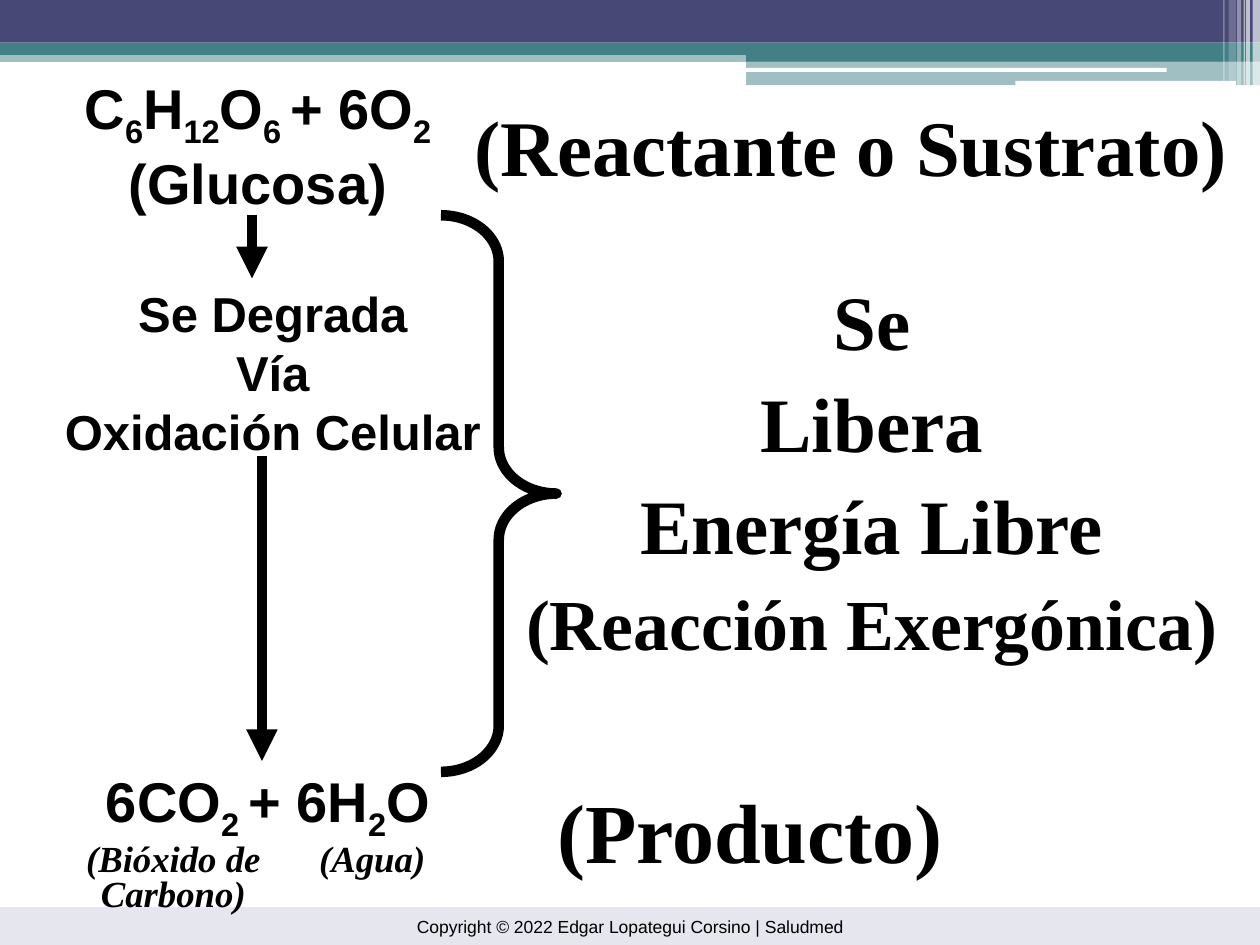
from dataclasses import dataclass

from lxml import etree
from pptx import Presentation
from pptx.dml.color import RGBColor
from pptx.enum.shapes import MSO_CONNECTOR, MSO_SHAPE
from pptx.enum.text import MSO_ANCHOR, PP_ALIGN
from pptx.oxml.ns import qn
from pptx.util import Cm, Pt

RECT, ROUND, BRACE = MSO_SHAPE.RECTANGLE, MSO_SHAPE.ROUNDED_RECTANGLE, MSO_SHAPE.RIGHT_BRACE
CENTER, RIGHT = PP_ALIGN.CENTER, PP_ALIGN.RIGHT
STRAIGHT = MSO_CONNECTOR.STRAIGHT
MIDDLE = MSO_ANCHOR.MIDDLE

COLORS = {
    "ink": "000000",
    "white": "FFFFFF",
    "indigo": "484876",
    "teal": "438086",
    "footer": "E6E6EF",
}
SANS, SERIF = "Arial", "Times New Roman"
LINE_WIDTH = Pt(6)
SPACE_SHARE = 0.24  # space between paragraphs as a share of the text size


@dataclass
class Band:
    left: float
    top: float
    width: float
    height: float
    color: str
    opacity: int = 100
    kind: int = RECT


@dataclass
class Label:
    """Text block; in a line, pieces between tildes are subscripts."""
    left: float
    top: float
    width: float
    height: float
    lines: list[tuple[str, float]]
    font: str
    spacing: float
    align: int = CENTER
    italic: bool = False


@dataclass
class Arrow:
    x: float
    top: float
    bottom: float


STRIPES = [  # left, width, height, opacity
    (25.25, 0.15, 1.73, 65),
    (25.12, 0.08, 1.73, 65),
    (25.07, 0.03, 1.73, 60),
    (24.94, 0.08, 1.73, 40),
    (24.77, 0.15, 1.63, 20),
    (24.66, 0.03, 1.63, 30),
]
BANDS = [
    Band(0, 1.02, 25.4, 0.23, "teal", 50),
    Band(0, 0, 25.4, 0.86, "indigo"),
    Band(0, 0.86, 25.4, 0.25, "teal"),
    Band(15.04, 0.99, 10.36, 0.25, "teal"),
    Band(15.04, 1.22, 10.36, 0.5, "teal", 50),
    Band(15.01, 1.37, 8.51, 0.08, "white", kind=ROUND),
    Band(20.47, 1.63, 4.45, 0.1, "white", kind=ROUND),
    *(Band(left, 0, width, height, "white", opacity)
      for left, width, height, opacity in STRIPES),
]
FOOTER = Band(0, 18.29, 25.4, 0.76, "footer")

LABELS = [
    Label(-0.2, 1.37, 10.8, 2.97,
          [("C~6~H~12~O~6 ~+ 6O~2~", 32), ("(Glucosa)", 32)], SANS, 0.9),
    Label(0, 5.82, 11, 3.61,
          [("Se Degrada", 28), ("Vía", 28), ("Oxidación Celular", 28)], SANS, 0.8),
    Label(0, 15.34, 10.8, 1.27, [("6CO~2 ~+ 6H~2~O", 32)], SANS, 0.9),
    Label(1.27, 17.04, 4.45, 1.7,
          [("(Bióxido de", 21), ("Carbono)", 21)], SERIF, 0.6, italic=True),
    Label(5.28, 17.04, 4.45, 1.7, [("(Agua)", 21)], SERIF, 0.6, italic=True),
    Label(9.1, 2.21, 15.88, 1.7, [("(Reactante o Sustrato)", 45)], SERIF, 0.8, RIGHT),
    Label(9.53, 15.98, 9.73, 1.7, [("(Producto)", 48)], SERIF, 0.8, RIGHT),
    Label(9.96, 5.61, 15.24, 8.05,
          [("Se", 44), ("Libera", 44), ("Energía Libre", 44),
           ("(Reacción Exergónica)", 41)], SERIF, 0.9),
]
ARROWS = [Arrow(5.28, 9.2, 15.34), Arrow(5.08, 4.34, 5.61)]


def rgb(name: str) -> RGBColor:
    return RGBColor.from_string(COLORS[name])


def draw_band(page, band: Band):
    shape = page.shapes.add_shape(
        band.kind, Cm(band.left), Cm(band.top), Cm(band.width), Cm(band.height))
    shape.shadow.inherit = False
    shape.line.fill.background()
    shape.fill.solid()
    shape.fill.fore_color.rgb = rgb(band.color)
    if band.opacity < 100:
        color = shape.fill._xPr.find(qn("a:solidFill"))[0]
        etree.SubElement(color, qn("a:alpha")).set("val", str(band.opacity * 1000))
    return shape


def add_span(para, text: str, formats: dict, subscript: bool = False) -> None:
    span = para.add_run()
    span.text = text
    for name, value in formats.items():
        setattr(span.font, name, value)
    span.font.color.rgb = rgb("ink")
    if subscript:
        span._r.get_or_add_rPr().set("baseline", "-25000")


def draw_label(page, label: Label) -> None:
    box = page.shapes.add_textbox(
        Cm(label.left), Cm(label.top), Cm(label.width), Cm(label.height))
    frame = box.text_frame
    frame.word_wrap = True
    for number, (text, size) in enumerate(label.lines):
        para = frame.add_paragraph() if number else frame.paragraphs[0]
        para.alignment = label.align
        para.line_spacing = label.spacing
        para.space_before = Pt(round(size * SPACE_SHARE, 1) if number else 0)
        formats = {"name": label.font, "size": Pt(size),
                   "bold": True, "italic": label.italic}
        for index, piece in enumerate(text.split("~")):
            if piece:
                add_span(para, piece, formats, subscript=index % 2 == 1)


def draw_arrow(page, arrow: Arrow) -> None:
    line = page.shapes.add_connector(
        STRAIGHT, Cm(arrow.x), Cm(arrow.top), Cm(arrow.x), Cm(arrow.bottom))
    line.line.color.rgb = rgb("ink")
    line.line.width = LINE_WIDTH
    etree.SubElement(line.line._get_or_add_ln(), qn("a:tailEnd")).set("type", "triangle")
    etree.SubElement(line._element.spPr, qn("a:effectLst"))


def draw_brace(page) -> None:
    brace = page.shapes.add_shape(BRACE, Cm(8.89), Cm(4.34), Cm(2.33), Cm(11.22))
    brace.shadow.inherit = False
    brace.adjustments[0] = 0.4
    brace.fill.background()
    brace.line.color.rgb = rgb("ink")
    brace.line.width = LINE_WIDTH


def draw_footer(page) -> None:
    frame = draw_band(page, FOOTER).text_frame
    frame.vertical_anchor = MIDDLE
    para = frame.paragraphs[0]
    para.alignment = CENTER
    add_span(para, "Copyright © 2022 Edgar Lopategui Corsino | Saludmed",
             {"name": SANS, "size": Pt(10)})


def main() -> None:
    deck = Presentation()
    deck.slide_width, deck.slide_height = Cm(25.4), Cm(19.05)
    page = deck.slides.add_slide(deck.slide_layouts[6])
    for band in BANDS:
        draw_band(page, band)
    draw_footer(page)
    for arrow in ARROWS:
        draw_arrow(page, arrow)
    draw_brace(page)
    for label in LABELS:
        draw_label(page, label)
    deck.save("out.pptx")


if __name__ == "__main__":
    main()
